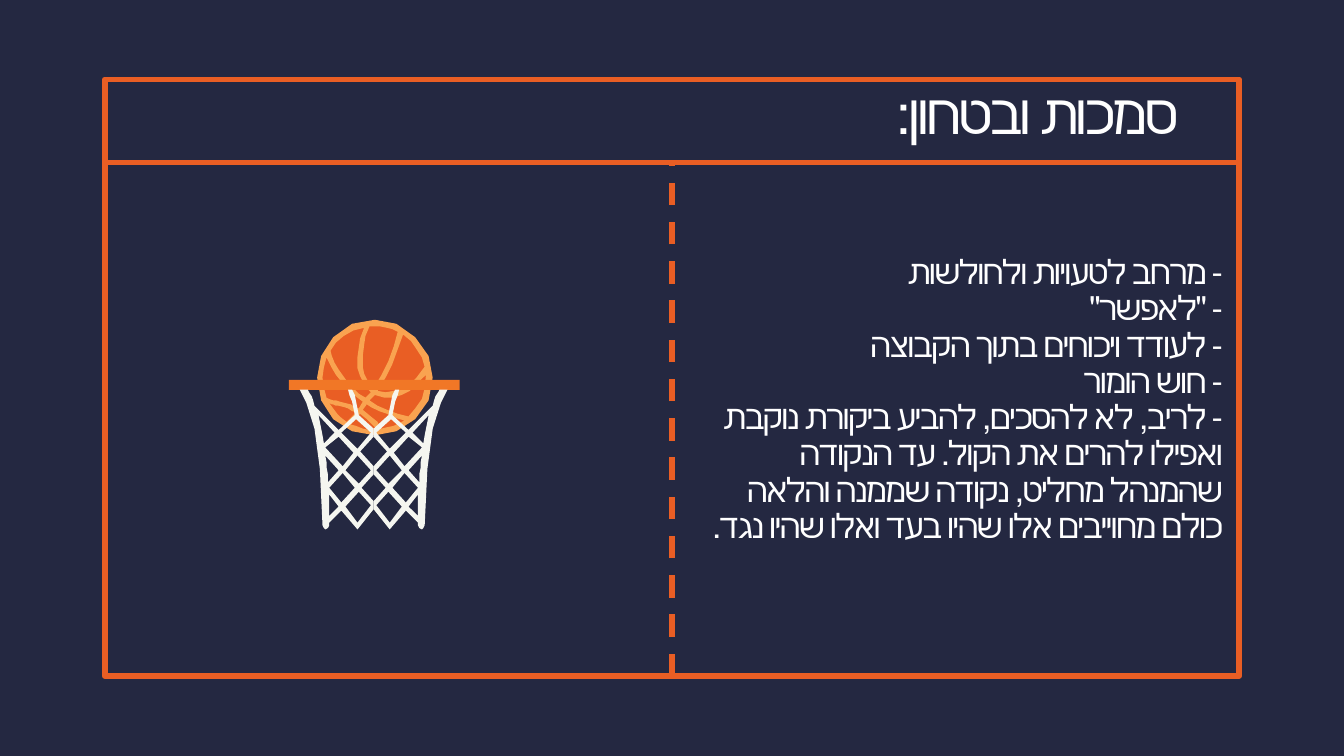
import pptx
import pptx.util
import pptx.dml.color
import pptx.enum.dml
import pptx.enum.shapes
import pptx.enum.text
import pptx.oxml.ns
from lxml import etree

Cm, Pt = pptx.util.Cm, pptx.util.Pt
SHAPES = pptx.enum.shapes.MSO_SHAPE

TITLE = "סמכות ובטחון:"
POINTS = [
    "- מרחב לטעויות ולחולשות",
    '- "לאפשר"',
    "- לעודד ויכוחים בתוך הקבוצה",
    "- חוש הומור",
    "- לריב, לא להסכים, להביע ביקורת נוקבת ואפילו להרים את הקול. "
    "עד הנקודה שהמנהל מחליט, נקודה שממנה והלאה "
    "כולם מחוייבים אלו שהיו בעד ואלו שהיו נגד. ",
]
FONT = "Calibri"
COLORS = {
    "background": "242841",
    "orange": "E95E24",
    "seam": "F9A350",
    "rim": "F17726",
    "net": "F5F6F0",
    "text": "FFFFFF",
}

# Lengths in centimetres
FRAME = (1.98, 1.5, 21.44, 11.28)
HEADER_Y = 3.07
BALL = (6.05, 6.12, 2.06, 2.06)
RIM = (5.46, 7.18, 3.23, 0.19)

# Outlines on a fine grid: a pair is a corner, six numbers are a cubic curve
GRID = Cm(0.0254)
NET_AXIS = 278
SEAMS = [
    [(279, 238), (255, 238, 236, 258, 236, 281), (236, 305, 255, 324, 279, 324),
     (302, 324, 322, 305, 322, 281), (322, 258, 302, 238, 279, 238)],
    [(279, 243), (285, 243, 291, 244, 296, 247), (293, 262, 286, 276, 278, 289),
     (274, 285, 271, 280, 270, 273), (269, 263, 271, 251, 275, 243)],
    [(300, 249), (308, 255, 314, 263, 316, 273), (312, 279, 308, 284, 303, 287),
     (297, 291, 290, 293, 281, 291), (289, 278, 296, 264, 300, 249)],
    [(271, 244), (267, 254, 265, 264, 266, 274), (268, 282, 271, 288, 276, 292),
     (272, 296), (265, 292, 260, 287, 257, 282), (250, 273, 247, 265, 246, 261),
     (251, 252, 260, 246, 271, 244)],
    [(243, 266), (245, 271, 248, 277, 254, 284), (258, 290, 264, 295, 270, 299),
     (267, 304), (263, 302, 259, 300, 253, 299), (249, 298, 246, 297, 243, 296),
     (239, 286, 239, 276, 243, 266)],
    [(317, 279), (317, 293, 312, 303, 304, 310), (292, 307, 283, 303, 275, 298),
     (279, 294), (288, 297, 297, 297, 305, 291), (309, 288, 313, 283, 317, 279)],
    [(245, 300), (247, 301, 250, 302, 252, 302), (257, 303, 261, 305, 265, 307),
     (258, 314), (253, 310, 248, 306, 245, 300)],
    [(273, 301), (276, 303), (283, 307, 292, 310, 301, 313),
     (296, 316, 290, 318, 284, 319), (284, 319, 280, 311, 270, 305)],
    [(268, 308), (275, 313, 279, 317, 280, 320), (272, 320, 267, 318, 261, 316)],
]
NET_HALF = [
    [(223, 290), (229, 299, 240, 325, 240, 391), (240, 395, 245, 395, 245, 391),
     (245, 389), (254, 380), (266, 394), (278, 379), (278, 373), (269, 363),
     (278, 353), (278, 347), (268, 336), (278, 325), (278, 319), (267, 309),
     (267, 303, 264, 295, 262, 290), (259, 290), (261, 295, 263, 303, 264, 309),
     (252, 320), (234, 302), (233, 297, 231, 293, 229, 290)],
    [(237, 309), (249, 322), (241, 330), (240, 322, 238, 315, 237, 309)],
    [(265, 312), (276, 322), (266, 334), (254, 322)],
    [(252, 325), (263, 337), (255, 347), (242, 333)],
    [(242, 339), (252, 350), (244, 359), (244, 351, 243, 345, 242, 339)],
    [(266, 339), (276, 350), (267, 360), (257, 350)],
    [(255, 352), (264, 363), (254, 374), (245, 363)],
    [(245, 368), (252, 377), (245, 384)],
    [(267, 366), (276, 376), (266, 389), (257, 377)],
]


def color(name):
    return pptx.dml.color.RGBColor.from_string(COLORS[name])


def set_line(shape):
    shape.line.color.rgb = color("orange")
    shape.line.width = Pt(3)


def paint(shape, fill):
    """Fill the shape, or leave it hollow, without shadow or line."""
    shape.shadow.inherit = False
    if fill:
        shape.fill.solid()
        shape.fill.fore_color.rgb = color(fill)
    else:
        shape.fill.background()
    shape.line.fill.background()
    return shape


def add_box(page, kind, place, fill=None):
    return paint(page.shapes.add_shape(kind, *map(Cm, place)), fill)


def add_rule(page, start, end):
    rule = page.shapes.add_connector(
        pptx.enum.shapes.MSO_CONNECTOR.STRAIGHT, *map(Cm, start + end))
    set_line(rule)
    etree.SubElement(rule._element.spPr, pptx.oxml.ns.qn("a:effectLst"))
    return rule


def flatten(outline, steps=4):
    """Turn an outline with cubic curves into corners only."""
    corners = [outline[0]]
    for part in outline[1:]:
        if len(part) == 2:
            corners.append(part)
            continue
        x0, y0 = corners[-1]
        x1, y1, x2, y2, x3, y3 = part
        for step in range(1, steps + 1):
            t = step / steps
            a, b, c, d = (1 - t) ** 3, 3 * t * (1 - t) ** 2, 3 * t * t * (1 - t), t ** 3
            corners.append((a * x0 + b * x1 + c * x2 + d * x3,
                            a * y0 + b * y1 + c * y2 + d * y3))
    return corners


def add_cutout(page, outlines, fill):
    """Add one filled shape: the first outline, with the others as holes."""
    (x, y), *rest = outlines[0]
    builder = page.shapes.build_freeform(x, y, scale=GRID)
    builder.add_line_segments(rest)
    for (x, y), *rest in outlines[1:]:
        builder.move_to(x, y)
        builder.add_line_segments(rest)
    paint(builder.convert_to_shape(), fill)


def add_text(page, place, lines, size, line_spacing, tracking, wrap, right_inset=0):
    """Add right-to-left paragraphs; tracking is in hundredths of a point."""
    box = page.shapes.add_textbox(*map(Cm, place))
    frame = box.text_frame
    frame.margin_left = frame.margin_top = frame.margin_bottom = 0
    frame.margin_right = Cm(right_inset)
    frame.word_wrap = wrap
    frame.auto_size = pptx.enum.text.MSO_AUTO_SIZE.SHAPE_TO_FIT_TEXT
    frame.text = "\n".join(lines)
    for para in frame.paragraphs:
        para.alignment = pptx.enum.text.PP_ALIGN.RIGHT
        para.line_spacing = line_spacing
        para._p.get_or_add_pPr().set("rtl", "1")
        for span in para.runs:
            span.font.size = Pt(size)
            span.font.name = FONT
            span.font.color.rgb = color("text")
            span._r.get_or_add_rPr().set("spc", str(tracking))


def add_frame(page):
    left, top, width, height = FRAME
    frame = add_box(page, SHAPES.RECTANGLE, FRAME)
    set_line(frame)
    etree.SubElement(frame.line._get_or_add_ln(), pptx.oxml.ns.qn("a:round"))
    add_rule(page, (left, HEADER_Y), (left + width, HEADER_Y))
    middle = left + width / 2
    divider = add_rule(page, (middle, top + height), (middle, HEADER_Y))
    divider.line.dash_style = pptx.enum.dml.MSO_LINE.DASH
    divider.begin_connect(frame, 2)


def add_ball_and_hoop(page):
    add_box(page, SHAPES.OVAL, BALL, "orange")
    add_cutout(page, [flatten(outline) for outline in SEAMS], "seam")
    add_box(page, SHAPES.RECTANGLE, RIM, "rim")
    net = [flatten(outline) for outline in NET_HALF]
    mirrored = [[(2 * NET_AXIS - x, y) for x, y in outline] for outline in net]
    for half in (net, mirrored):
        add_cutout(page, half, "net")


def main():
    deck = pptx.Presentation()
    deck.slide_width, deck.slide_height = Cm(25.4), Cm(14.29)
    page = deck.slides.add_slide(deck.slide_layouts[6])
    page.background.fill.solid()
    page.background.fill.fore_color.rgb = color("background")
    add_frame(page)
    add_ball_and_hoop(page)
    add_text(page, (13, 4.83, 10.11, 5.56), POINTS, 18, 0.9, -90, True)
    add_text(page, (16.94, 1.83, 5.94, 1.45), [TITLE], 30, 0.7, -150, False, 0.6)
    deck.save("out.pptx")


if __name__ == "__main__":
    main()
